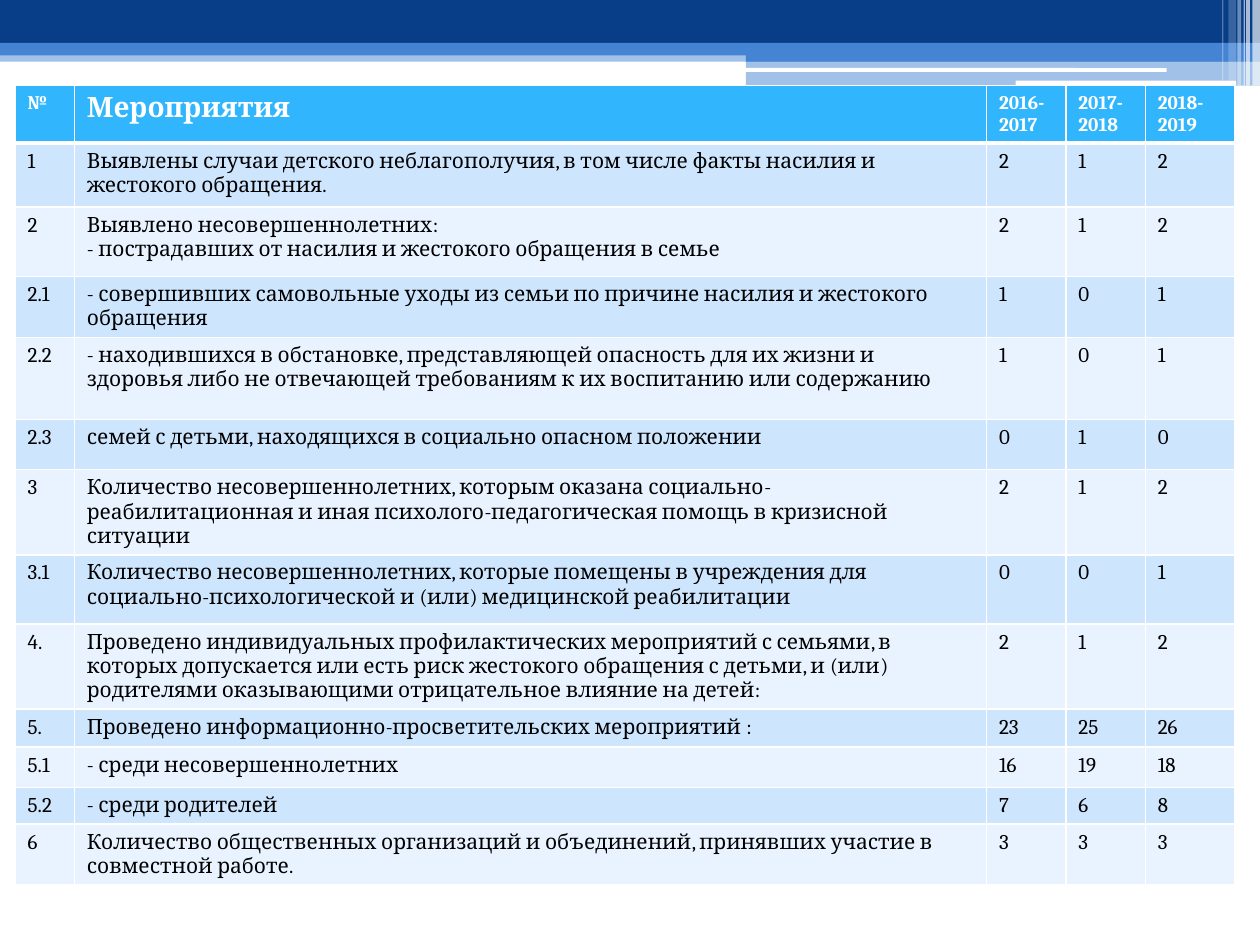
import dataclasses

import lxml.etree
import pptx
import pptx.dml.color
import pptx.enum.shapes
import pptx.oxml.ns
import pptx.util


@dataclasses.dataclass(frozen=True)
class Theme:
    font: str = "Cambria"
    navy: str = "073E87"
    blue: str = "4584D3"
    white: str = "FFFFFF"
    black: str = "000000"
    header: str = "31B6FD"
    bands: tuple = ("CEE5FE", "E8F3FF")
    title_size: int = 16
    year_size: int = 11
    body_size: int = 12
    border: int = 1
    header_border: int = 3


THEME = Theme()
GRID_COLUMNS, GRID_ROWS = 100, 75
SLIDE_WIDTH, SLIDE_HEIGHT = pptx.util.Inches(10), pptx.util.Inches(7.5)
RECTANGLE = pptx.enum.shapes.MSO_SHAPE.RECTANGLE
ROUNDED = pptx.enum.shapes.MSO_SHAPE.ROUNDED_RECTANGLE

BANDS = [
    (0, 4, 100, 0.9, THEME.blue, 50),
    (0, 0, 100, 3.4, THEME.navy, 100),
    (0, 3.4, 100, 1, THEME.blue, 100),
    (59.2, 3.9, 40.8, 1, THEME.blue, 100),
    (59.2, 4.8, 40.8, 2, THEME.blue, 50),
]
RULES = [(59.1, 5.4, 33.5, 0.3), (80.6, 6.4, 17.5, 0.4)]
STRIPES = [
    (99.4, 0.6, 6.8, 65),
    (98.9, 0.3, 6.8, 65),
    (98.7, 0.1, 6.8, 60),
    (98.2, 0.3, 6.8, 40),
    (97.5, 0.6, 6.4, 20),
    (97, 0.1, 6.4, 30),
]

TABLE_LEFT, TABLE_TOP = 1.2, 6.8
COLUMN_WIDTHS = [4.7, 72.4, 6.3, 6.3, 7.1]
ROW_HEIGHTS = [4.5, 5.1, 5.5, 4.8, 6.5, 4, 6.7, 5.5, 6.7, 3, 3.2, 2.9, 4.8]
HEADINGS = ["№", "Мероприятия", "2016-2017", "2017-2018", "2018-2019"]
MEASURES = [
    ("1", "Выявлены случаи детского неблагополучия, в том числе факты насилия и "
     "жестокого обращения.", 2, 1, 2),
    ("2", "Выявлено несовершеннолетних:\n"
     "- пострадавших от насилия и жестокого обращения в семье", 2, 1, 2),
    ("2.1", "- совершивших самовольные уходы из семьи по причине насилия и "
     "жестокого обращения", 1, 0, 1),
    ("2.2", "- находившихся в обстановке, представляющей опасность для их жизни и "
     "здоровья либо не отвечающей требованиям к их воспитанию или содержанию", 1, 0, 1),
    ("2.3", "семей с детьми, находящихся в социально опасном положении", 0, 1, 0),
    ("3", "Количество несовершеннолетних, которым оказана социально-реабилитационная "
     "и иная психолого-педагогическая помощь в кризисной ситуации", 2, 1, 2),
    ("3.1", "Количество несовершеннолетних, которые помещены в учреждения для "
     "социально-психологической и (или) медицинской реабилитации", 0, 0, 1),
    ("4.", "Проведено индивидуальных профилактических мероприятий с семьями, в "
     "которых допускается или есть риск жестокого обращения с детьми, и (или) "
     "родителями оказывающими отрицательное влияние на детей:", 2, 1, 2),
    ("5.", "Проведено информационно-просветительских мероприятий :", 23, 25, 26),
    ("5.1", "- среди несовершеннолетних", 16, 19, 18),
    ("5.2", "- среди родителей", 7, 6, 8),
    ("6", "Количество общественных организаций и объединений, принявших участие в "
     "совместной работе.", 3, 3, 3),
]


def columns(count):
    return round(SLIDE_WIDTH * count / GRID_COLUMNS)


def rows(count):
    return round(SLIDE_HEIGHT * count / GRID_ROWS)


def rgb(value):
    return pptx.dml.color.RGBColor.from_string(value)


def add_child(parent, tag, **attributes):
    return lxml.etree.SubElement(parent, pptx.oxml.ns.qn(tag), **attributes)


def add_bar(page, left, top, width, height, color, opacity=100, kind=RECTANGLE):
    bar = page.shapes.add_shape(
        kind, columns(left), rows(top), columns(width), rows(height))
    bar.shadow.inherit = False
    bar.line.fill.background()
    bar.fill.solid()
    bar.fill.fore_color.rgb = rgb(color)
    if opacity < 100:
        color_node = bar.fill._xPr.find(".//" + pptx.oxml.ns.qn("a:srgbClr"))
        add_child(color_node, "a:alpha", val=str(opacity * 1000))


def add_banner(page):
    for left, top, width, height, color, opacity in BANDS:
        add_bar(page, left, top, width, height, color, opacity)
    for left, top, width, height in RULES:
        add_bar(page, left, top, width, height, THEME.white, kind=ROUNDED)
    for left, width, height, opacity in STRIPES:
        add_bar(page, left, 0, width, height, THEME.white, opacity)


def set_borders(cell, top, bottom):
    properties = cell._tc.get_or_add_tcPr()
    sides = [("a:lnL", THEME.border), ("a:lnR", THEME.border),
             ("a:lnT", top), ("a:lnB", bottom)]
    for tag, points in sides:
        line = add_child(properties, tag, w=str(pptx.util.Pt(points)))
        add_child(add_child(line, "a:solidFill"), "a:srgbClr", val=THEME.white)


def fill_cell(cell, text, fill, size, color, bold=False,
              top=THEME.border, bottom=THEME.border):
    set_borders(cell, top, bottom)
    cell.fill.solid()
    cell.fill.fore_color.rgb = rgb(fill)
    for index, line in enumerate(text.split("\n")):
        frame = cell.text_frame
        para = frame.add_paragraph() if index else frame.paragraphs[0]
        span = para.add_run()
        span.text = line
        span.font.name = THEME.font
        span.font.size = pptx.util.Pt(size)
        span.font.bold = bold
        span.font.color.rgb = rgb(color)


def add_measures_table(page):
    frame = page.shapes.add_table(
        len(ROW_HEIGHTS), len(COLUMN_WIDTHS), columns(TABLE_LEFT), rows(TABLE_TOP),
        columns(sum(COLUMN_WIDTHS)), rows(sum(ROW_HEIGHTS)))
    table = frame.table
    table.horz_banding = False
    for column, width in zip(table.columns, COLUMN_WIDTHS):
        column.width = columns(width)
    for row, height in zip(table.rows, ROW_HEIGHTS):
        row.height = rows(height)

    for index, heading in enumerate(HEADINGS):
        size = THEME.title_size if index == 1 else THEME.year_size
        fill_cell(table.cell(0, index), heading, THEME.header, size, THEME.white,
                  bold=True, bottom=THEME.header_border)
    for row_index, measure in enumerate(MEASURES, start=1):
        fill = THEME.bands[(row_index - 1) % len(THEME.bands)]
        top = THEME.header_border if row_index == 1 else THEME.border
        for index, value in enumerate(measure):
            fill_cell(table.cell(row_index, index), str(value), fill,
                      THEME.body_size, THEME.black, top=top)


def main():
    deck = pptx.Presentation()
    deck.slide_width, deck.slide_height = SLIDE_WIDTH, SLIDE_HEIGHT
    page = deck.slides.add_slide(deck.slide_layouts[6])
    add_banner(page)
    add_measures_table(page)
    deck.save("out.pptx")


if __name__ == "__main__":
    main()
